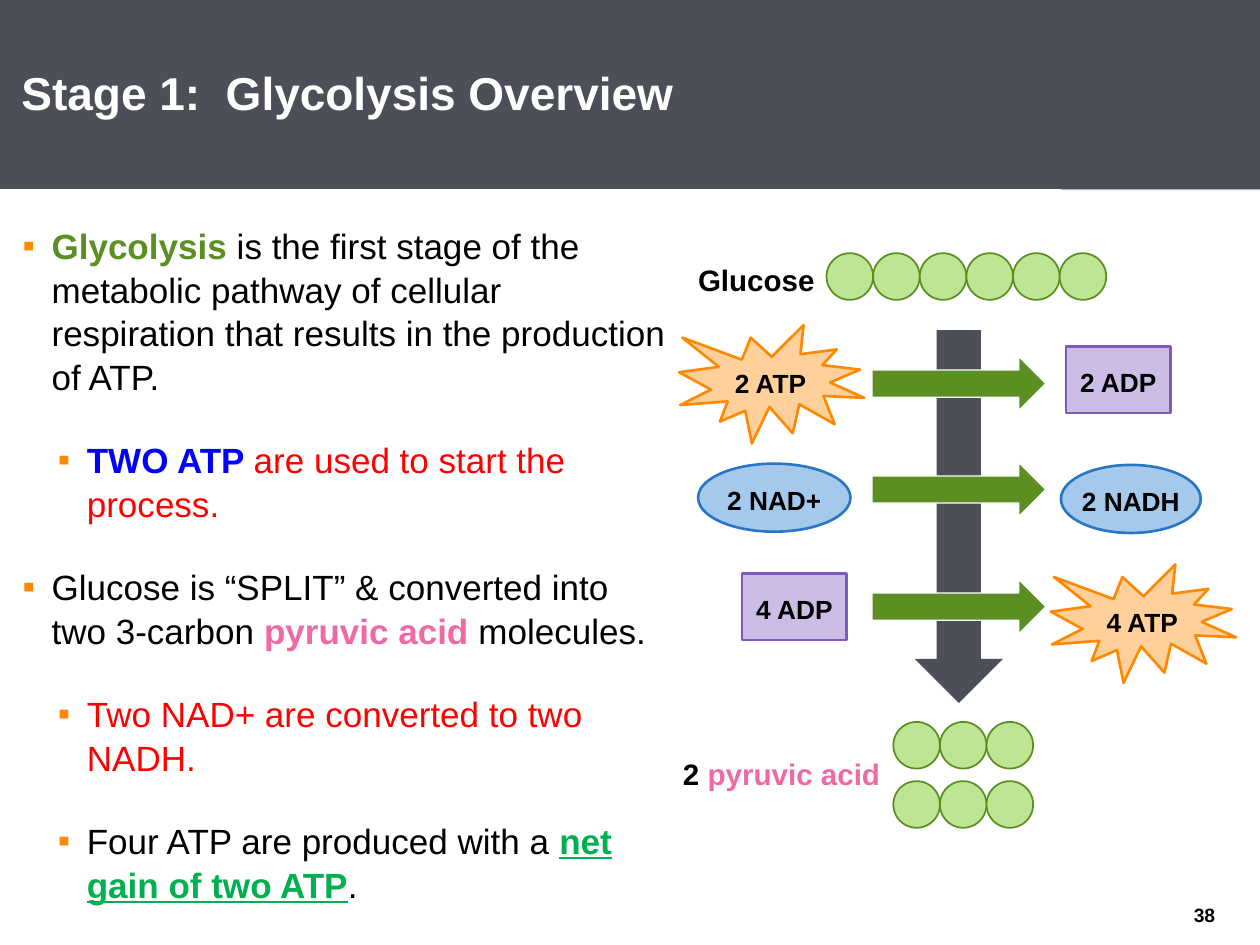
from lxml.etree import SubElement
from pptx import Presentation
from pptx.dml.color import RGBColor
from pptx.enum.shapes import MSO_SHAPE
from pptx.enum.text import MSO_ANCHOR, PP_ALIGN
from pptx.oxml.ns import qn
from pptx.util import Inches, Pt

COLORS = {
    "white": "FFFFFF", "black": "000000", "slate": "4D4F58", "gray": "B5B7BF",
    "green": "5B8F22", "light green": "BEE593", "orange": "FE8900",
    "light orange": "FFD099", "purple": "7E5ABE", "light purple": "CBBDE5",
    "blue": "2877C4", "light blue": "A4C9EC", "pink": "F069A6",
    "red": "FF0000", "bright blue": "0000FF", "gain green": "00B050",
}


def add_shape(kind, left, top, width, height, fill, line=None, line_width=1):
    shape = slide.shapes.add_shape(
        kind, Inches(left), Inches(top), Inches(width), Inches(height))
    shape.shadow.inherit = False
    shape.fill.solid()
    shape.fill.fore_color.rgb = RGBColor.from_string(COLORS[fill])
    if line:
        shape.line.color.rgb = RGBColor.from_string(COLORS[line])
        shape.line.width = Pt(line_width)
    else:
        shape.line.fill.background()
    return shape


def write_runs(paragraph, runs, size):
    for text, color, bold in runs:
        run = paragraph.add_run()
        run.text = text
        run.font.name = "Arial"
        run.font.size = Pt(size)
        run.font.bold = bold
        run.font.color.rgb = RGBColor.from_string(COLORS[color])


presentation = Presentation()
presentation.slide_width = Inches(10)
presentation.slide_height = Inches(7.5)
slide = presentation.slides.add_slide(presentation.slide_layouts[5])

title = slide.shapes.title
title.left, title.top = Inches(0), Inches(0)
title.width, title.height = Inches(10), Inches(1.5)
title.fill.solid()
title.fill.fore_color.rgb = RGBColor.from_string(COLORS["slate"])
frame = title.text_frame
frame.word_wrap = True
frame.vertical_anchor = MSO_ANCHOR.MIDDLE
frame.margin_left = frame.margin_right = Inches(0.17)
frame.margin_top = frame.margin_bottom = Inches(0.07)
paragraph = frame.paragraphs[0]
paragraph.alignment = PP_ALIGN.LEFT
paragraph.line_spacing = 0.95
write_runs(paragraph, [("Stage 1:  Glycolysis Overview", "white", True)], 26.3)

corner = add_shape(MSO_SHAPE.RECTANGLE, 8.42, 0, 1.58, 1.51, "gray")
title.element.addprevious(corner.element)

bullets = [
    (0.23, [("Glycolysis", "green", True),
            (" is the first stage of the metabolic pathway of cellular respiration "
             "that results in the production of ATP.", "black", False)]),
    (0.51, [("TWO ATP ", "bright blue", True),
            ("are used to start the process.", "red", False)]),
    (0.23, [("Glucose is “SPLIT” & converted into two 3-carbon ", "black", False),
            ("pyruvic acid ", "pink", True), ("molecules.", "black", False)]),
    (0.51, [("Two NAD+ are converted to two NADH.", "red", False)]),
    (0.51, [("Four ATP are produced with a ", "black", False),
            ("net gain of two ATP", "gain green", True), (".", "black", False)]),
]
body = slide.shapes.add_textbox(Inches(0), Inches(1.67), Inches(5.34), Inches(5.42))
frame = body.text_frame
frame.word_wrap = True
frame.margin_left, frame.margin_right = Inches(0.18), Inches(0)
frame.margin_top = frame.margin_bottom = Inches(0.1)
for index, (indent, runs) in enumerate(bullets):
    paragraph = frame.add_paragraph() if index else frame.paragraphs[0]
    paragraph.space_before = paragraph.space_after = Pt(11.3)
    paragraph.line_spacing = 1.04
    write_runs(paragraph, runs, 20)
    properties = paragraph._p.get_or_add_pPr()
    properties.set("marL", str(Inches(indent)))
    properties.set("indent", str(Inches(-0.23)))
    bullet_color = SubElement(properties, qn("a:buClr"))
    SubElement(bullet_color, qn("a:srgbClr"), val=COLORS["orange"])
    SubElement(properties, qn("a:buFont"), typeface="Arial")
    SubElement(properties, qn("a:buChar"), char="▪")
frame.paragraphs[-1].runs[1].font.underline = True

labels = [
    (5.54, 2.04, 0.94, 0.33, [("Glucose", "black", True)]),
    (5.42, 5.96, 1.58, 0.3, [("2 ", "black", True), ("pyruvic acid", "pink", True)]),
]
for left, top, width, height, runs in labels:
    label = slide.shapes.add_textbox(
        Inches(left), Inches(top), Inches(width), Inches(height))
    frame = label.text_frame
    frame.word_wrap = False
    frame.margin_left = frame.margin_right = 0
    frame.margin_top = frame.margin_bottom = 0
    frame.paragraphs[0].line_spacing = 1.15
    write_runs(frame.paragraphs[0], runs, 16.9)

carbon_rows = [(6.56, 2.01, 6), (7.09, 5.73, 3), (7.09, 6.2, 3)]
for left, top, count in carbon_rows:
    for index in range(count):
        add_shape(MSO_SHAPE.OVAL, left + index * 0.37, top, 0.37, 0.37,
                  "light green", "green")

add_shape(MSO_SHAPE.DOWN_ARROW, 7.26, 2.62, 0.7, 2.96, "slate")
for top in (2.83, 3.67, 4.6):
    add_shape(MSO_SHAPE.RIGHT_ARROW, 6.92, top, 1.38, 0.43, "green", "white", 0.75)

molecules = [
    ("4 ADP", MSO_SHAPE.RECTANGLE, 5.89, 4.55, 0.83, 0.53, "purple"),
    ("2 ADP", MSO_SHAPE.RECTANGLE, 8.46, 2.75, 0.83, 0.53, "purple"),
    ("2 ATP", MSO_SHAPE.EXPLOSION1, 5.39, 2.58, 1.47, 0.94, "orange"),
    ("4 ATP", MSO_SHAPE.EXPLOSION1, 8.34, 4.48, 1.47, 0.94, "orange"),
    ("2 NAD+", MSO_SHAPE.OVAL, 5.54, 3.68, 1.21, 0.54, "blue"),
    ("2 NADH", MSO_SHAPE.OVAL, 8.42, 3.69, 1.11, 0.54, "blue"),
]
for name, kind, left, top, width, height, color in molecules:
    molecule = add_shape(kind, left, top, width, height, f"light {color}", color, 1.5)
    frame = molecule.text_frame
    frame.vertical_anchor = MSO_ANCHOR.MIDDLE
    frame.margin_left = frame.margin_right = 0
    frame.margin_top = frame.margin_bottom = 0
    paragraph = frame.paragraphs[0]
    paragraph.alignment = PP_ALIGN.CENTER
    paragraph.line_spacing = 1.15
    write_runs(paragraph, [(name, "black", True)], 15)

page_number = slide.shapes.add_textbox(
    Inches(9.31), Inches(7.11), Inches(0.5), Inches(0.3))
frame = page_number.text_frame
frame.word_wrap = True
frame.vertical_anchor = MSO_ANCHOR.MIDDLE
frame.paragraphs[0].alignment = PP_ALIGN.CENTER
write_runs(frame.paragraphs[0], [("38", "black", True)], 11)

presentation.save("out.pptx")
